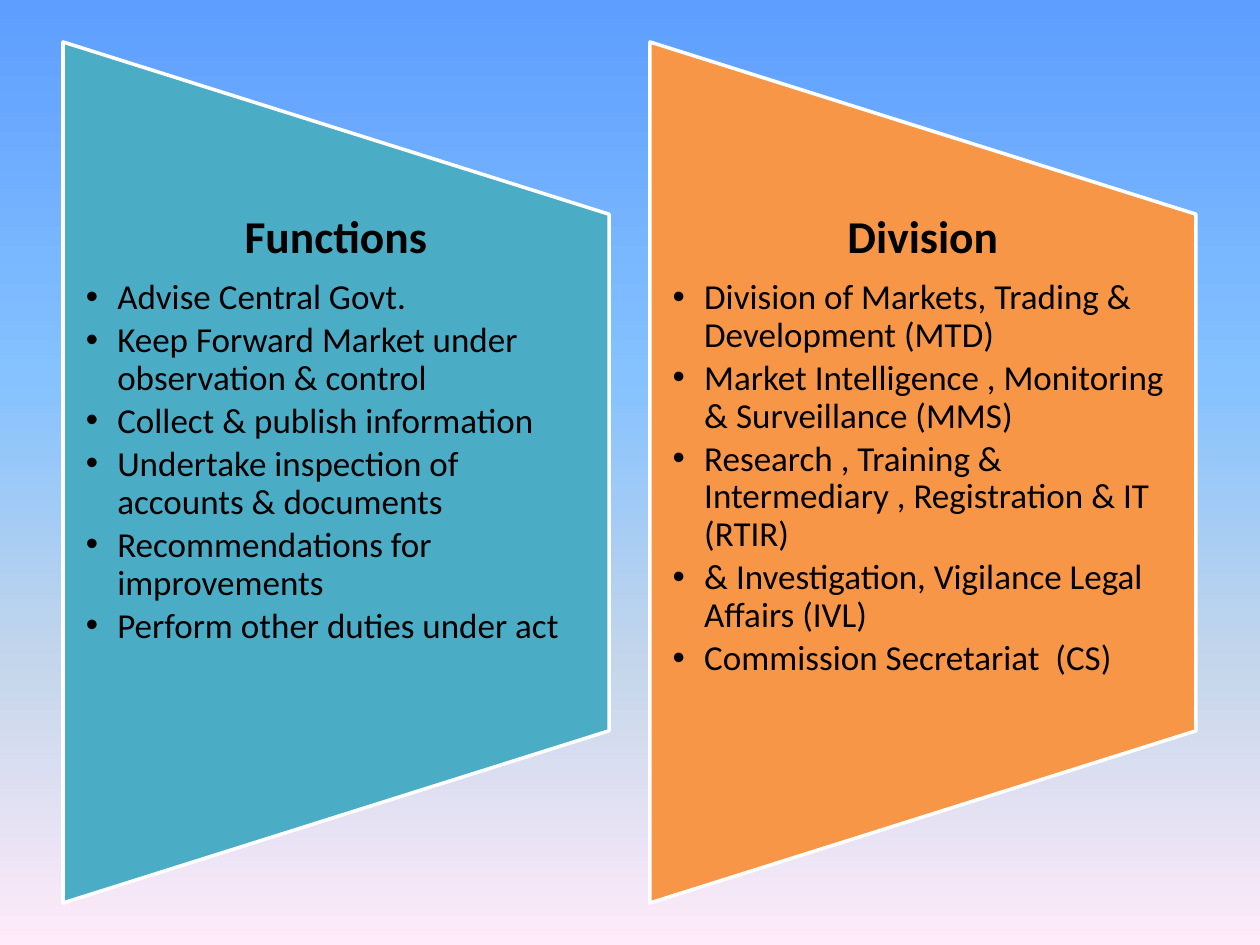
from lxml import etree
from pptx import Presentation
from pptx import util as u
from pptx.dml.color import RGBColor
from pptx.enum import shapes, text
from pptx.oxml.ns import qn

Pt = u.Pt
COLORS = {"teal": "4BACC6", "orange": "F79646", "white": "FFFFFF", "black": "000000"}
SKY = [(0, "5E9EFF"), (40, "85C2FF"), (70, "C4D6EB"), (100, "FFEBFA")]
SLIDE_WIDTH, SLIDE_HEIGHT = 720, 540
PANEL_WIDTH, PANEL_HEIGHT = 312, 492
PANEL_LEFT, PANEL_PITCH = 36, 335.4
TEXT_HEIGHT = 295.2

PANELS = [
    ("teal", "Functions", [
        "Advise Central Govt.",
        "Keep Forward Market under observation & control",
        "Collect & publish information",
        "Undertake inspection of accounts & documents",
        "Recommendations for improvements",
        "Perform other duties under act",
    ]),
    ("orange", "Division", [
        "Division of Markets, Trading & Development (MTD)",
        "Market Intelligence , Monitoring & Surveillance (MMS)",
        "Research , Training & Intermediary , Registration & IT (RTIR)",
        "& Investigation, Vigilance Legal Affairs (IVL)",
        "Commission Secretariat  (CS)",
    ]),
]


def color(name):
    return RGBColor.from_string(COLORS[name])


def set_all(target, values):
    for name, value in values.items():
        setattr(target, name, value)


class SlideBuilder:
    font_name = "Calibri"
    heading = {"alignment": text.PP_ALIGN.CENTER, "line_spacing": 0.9, "space_after": Pt(9.1)}
    bullet = {"alignment": text.PP_ALIGN.LEFT, "line_spacing": 0.9, "space_after": Pt(3), "level": 1}

    def __init__(self, slide):
        self.slide = slide

    def background(self, stops):
        """Fill the background from top to bottom with (percent, hex) stops."""
        fill = self.slide.background.fill
        fill.gradient()
        fill.gradient_angle = 270
        stop_list = next(self.slide.element.iter(qn("a:gsLst")))
        for stop in list(stop_list):
            stop_list.remove(stop)
        for percent, value in stops:
            stop = etree.SubElement(stop_list, qn("a:gs"), pos=str(percent * 1000))
            etree.SubElement(stop, qn("a:srgbClr"), val=value)

    def trapezoid(self, left, fill):
        """Draw a panel whose tall side is on the left, centred vertically."""
        shape = self.slide.shapes.add_shape(
            shapes.MSO_SHAPE.FLOWCHART_MANUAL_OPERATION,
            Pt(left + (PANEL_WIDTH - PANEL_HEIGHT) / 2), Pt((SLIDE_HEIGHT - PANEL_WIDTH) / 2),
            Pt(PANEL_HEIGHT), Pt(PANEL_WIDTH))
        shape.rotation = 270
        shape.shadow.inherit = False
        shape.fill.solid()
        shape.fill.fore_color.rgb = color(fill)
        shape.line.color.rgb = color("white")
        shape.line.width = Pt(2)

    def text_panel(self, left, title, items):
        shape = self.slide.shapes.add_textbox(
            Pt(left), Pt((SLIDE_HEIGHT - TEXT_HEIGHT) / 2), Pt(PANEL_WIDTH), Pt(TEXT_HEIGHT))
        frame = shape.text_frame
        set_all(frame, {"word_wrap": True, "vertical_anchor": text.MSO_ANCHOR.TOP,
                        "margin_left": Pt(13), "margin_right": Pt(13),
                        "margin_top": 0, "margin_bottom": 0})
        self.fill_paragraph(frame.paragraphs[0], title, self.heading, 26, True)
        for item in items:
            paragraph = frame.add_paragraph()
            self.add_bullet(paragraph)
            self.fill_paragraph(paragraph, item, self.bullet, 20, False)

    def add_bullet(self, paragraph):
        properties = paragraph._p.get_or_add_pPr()
        properties.set("marL", str(Pt(18)))
        properties.set("indent", str(-Pt(18)))
        etree.SubElement(properties, qn("a:buFont"), typeface="Arial")
        etree.SubElement(properties, qn("a:buChar"), char="•")

    def fill_paragraph(self, paragraph, words, layout, size, bold):
        set_all(paragraph, layout)
        run = paragraph.add_run()
        run.text = words
        set_all(run.font, {"name": self.font_name, "size": Pt(size), "bold": bold})
        run.font.color.rgb = color("black")


def main():
    presentation = Presentation()
    presentation.slide_width, presentation.slide_height = Pt(SLIDE_WIDTH), Pt(SLIDE_HEIGHT)
    blank = presentation.slide_layouts[6]
    builder = SlideBuilder(presentation.slides.add_slide(blank))
    builder.background(SKY)
    for index, (fill, title, items) in enumerate(PANELS):
        left = PANEL_LEFT + index * PANEL_PITCH
        builder.trapezoid(left, fill)
        builder.text_panel(left, title, items)
    presentation.save("out.pptx")


if __name__ == "__main__":
    main()
